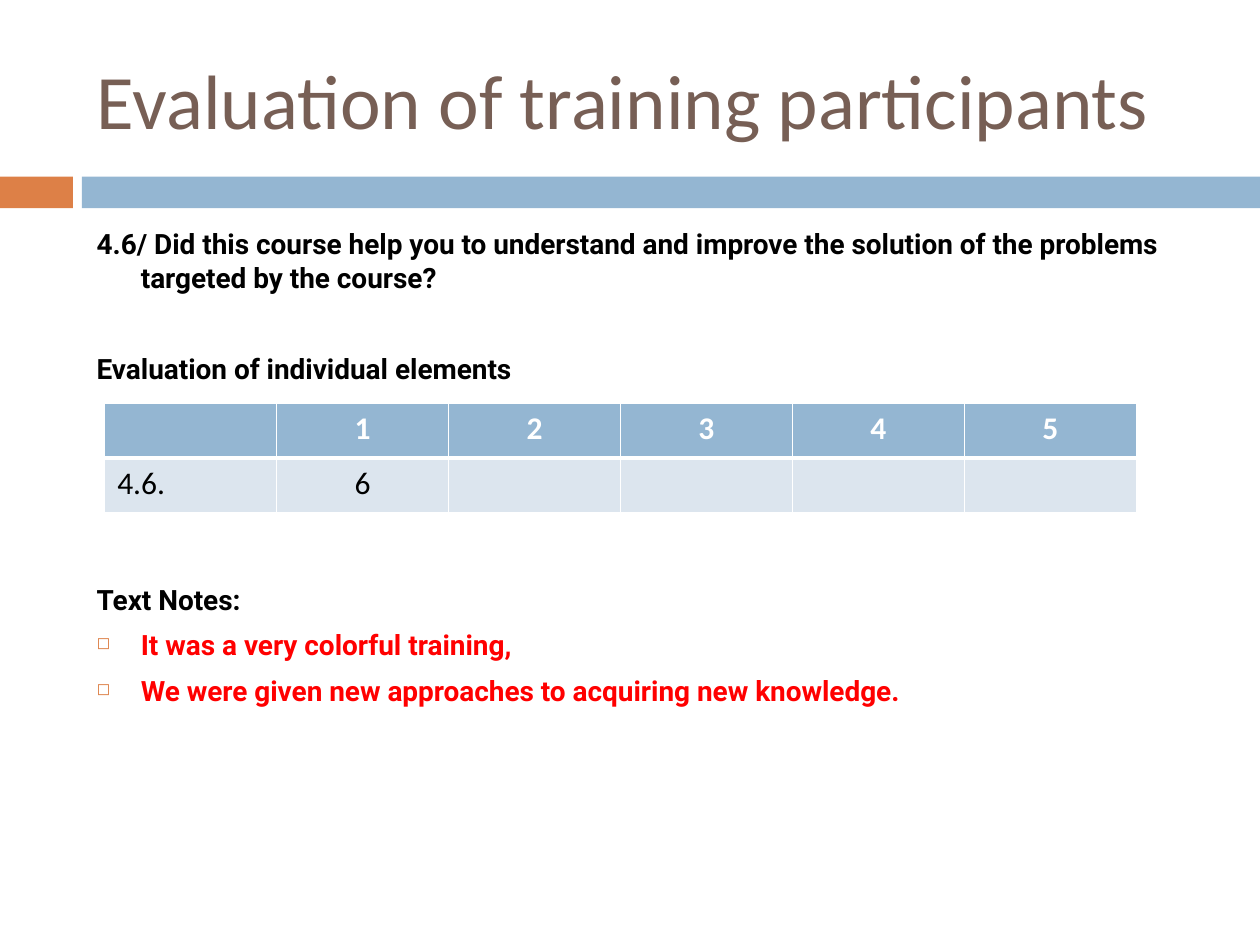
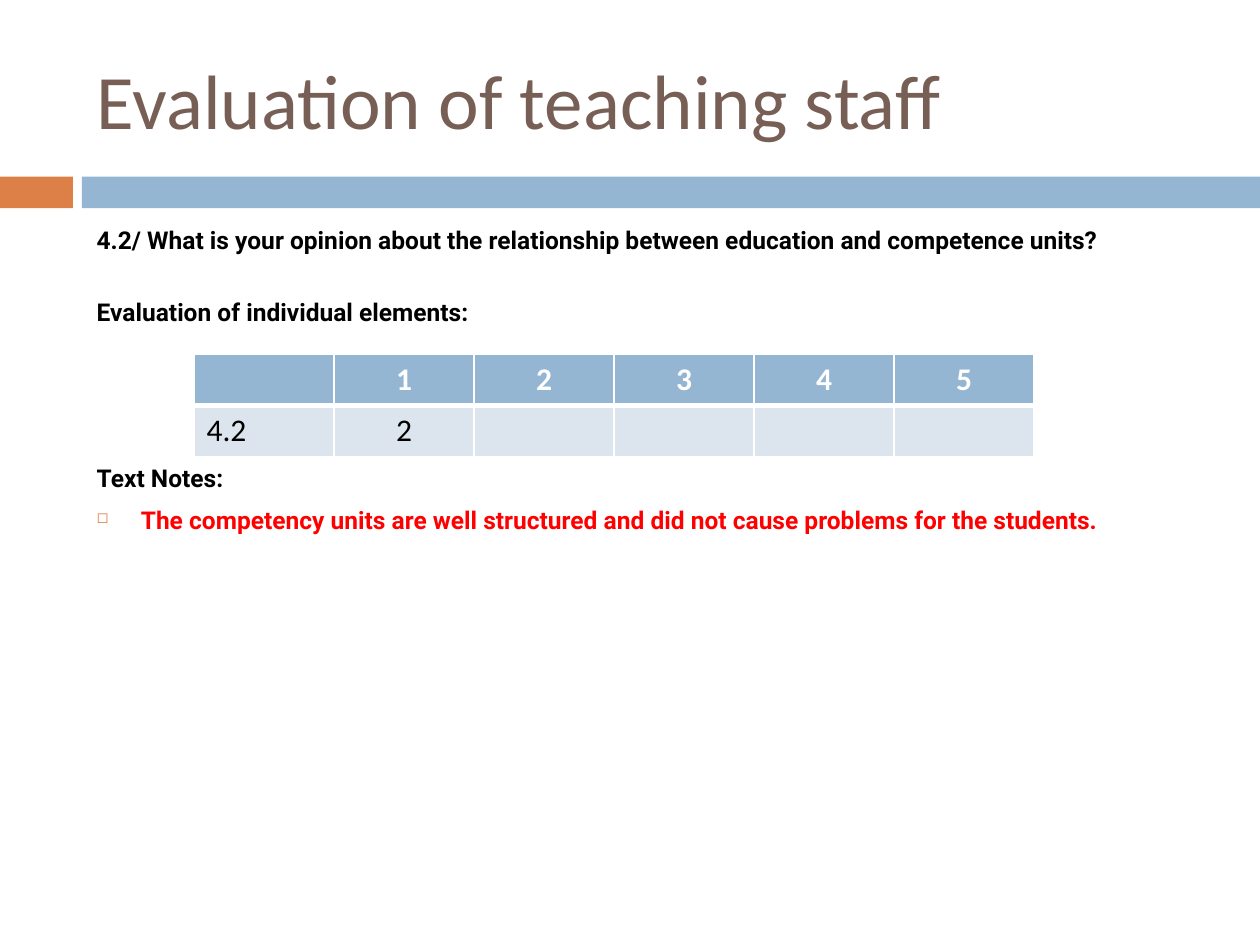
from dataclasses import dataclass

from lxml.etree import SubElement
from pptx import Presentation
from pptx.dml.color import RGBColor
from pptx.enum.shapes import MSO_SHAPE
from pptx.enum.text import MSO_ANCHOR, PP_ALIGN
from pptx.oxml.ns import qn
from pptx.util import Cm, Pt

# Content: lengths in cm, gaps before paragraphs in points
RATINGS = ["", "1", "2", "3", "4", "5"]
SLIDES = [
    dict(
        title="Evaluation of training participants",
        question="4.6/ Did this course help you to understand and improve "
                 "the solution of the problems targeted by the course?",
        heading="Evaluation of individual elements",
        notes=["It was a very colorful training,",
               "We were given new approaches to acquiring new knowledge."],
        scores=["4.6.", "6", "", "", "", ""],
        body_box=(1.7, 4.45, 22.99, 13.87), body_size=16, question_spacing=1.0,
        heading_gap=33, notes_gap=112.4,
        table_at=(2.11, 8.13), table_width=20.8, row_height=1.1,
    ),
    dict(
        title="Evaluation of teaching staff",
        question="4.2/ What is your opinion about the relationship between "
                 "education and competence units?",
        heading="Evaluation of individual elements:",
        notes=["The competency units are well structured and did not cause "
               "problems for the students."],
        scores=["4.2", "2", "", "", "", ""],
        body_box=(1.7, 4.52, 23.19, 13.87), body_size=14, question_spacing=0.8,
        heading_gap=27.8, notes_gap=78.2,
        table_at=(3.91, 7.14), table_width=16.94, row_height=1.03,
    ),
]


@dataclass(frozen=True)
class Theme:
    title: str = "775F55"
    accent: str = "DD8047"
    band: str = "94B6D2"
    score_row: str = "DCE5EE"
    text: str = "000000"
    note: str = "FF0000"
    white: str = "FFFFFF"
    title_font: str = "Calibri"
    body_font: str = "Roboto"
    title_size: int = 44
    table_size: int = 18
    paragraph_gap: int = 7
    bullet_percent: int = 60
    thin: int = 1
    thick: int = 3


THEME = Theme()
TITLE_BOX = (1.7, 0.63, 22.66, 2.74)
BANDS = [((0, 3.56, 1.47, 0.64), THEME.accent),
         ((1.65, 3.56, 23.75, 0.64), THEME.band)]
HANGING = Cm(0.89)


def add_color(parent, color):
    SubElement(parent, qn("a:srgbClr"), val=color)


def write(frame, text, *, size, font, color=THEME.text, bold=False,
          align=PP_ALIGN.LEFT, gap=0, spacing=1.0, hanging=False, bullet=False):
    """Fill the first paragraph of the frame, or add one after it."""
    paragraph = frame.paragraphs[0]
    if paragraph.runs:
        paragraph = frame.add_paragraph()
    paragraph.alignment = align
    paragraph.space_before = Pt(gap)
    paragraph.line_spacing = spacing
    run = paragraph.add_run()
    run.text = text
    run.font.size, run.font.name, run.font.bold = Pt(size), font, bold
    run.font.color.rgb = RGBColor.from_string(color)
    properties = paragraph._p.get_or_add_pPr()
    if hanging:
        properties.set("marL", str(HANGING))
        properties.set("indent", str(-HANGING))
    if bullet:
        add_color(SubElement(properties, qn("a:buClr")), THEME.accent)
        SubElement(properties, qn("a:buSzPct"), val=str(THEME.bullet_percent * 1000))
        SubElement(properties, qn("a:buChar"), char="◻")


def add_frame(slide, box, anchor=MSO_ANCHOR.TOP):
    frame = slide.shapes.add_textbox(*map(Cm, box)).text_frame
    frame.word_wrap = True
    frame.vertical_anchor = anchor
    return frame


def add_header(slide, title):
    for box, color in BANDS:
        band = slide.shapes.add_shape(MSO_SHAPE.RECTANGLE, *map(Cm, box))
        band.shadow.inherit = False
        band.fill.solid()
        band.fill.fore_color.rgb = RGBColor.from_string(color)
        band.line.fill.background()
    write(add_frame(slide, TITLE_BOX, MSO_ANCHOR.MIDDLE), title,
          size=THEME.title_size, font=THEME.title_font, color=THEME.title)


def add_body(slide, content):
    body = add_frame(slide, content["body_box"])
    style = dict(size=content["body_size"], font=THEME.body_font, bold=True, hanging=True)
    spacing = content["question_spacing"]
    write(body, content["question"], gap=THEME.paragraph_gap, spacing=spacing, **style)
    write(body, content["heading"], gap=content["heading_gap"], spacing=spacing, **style)
    write(body, "Text Notes:", gap=content["notes_gap"], **style)
    for note in content["notes"]:
        write(body, note, color=THEME.note, gap=THEME.paragraph_gap, bullet=True, **style)


def style_cell(cell, fill, is_header):
    # Borders go before the fill in the cell properties
    widths = dict(lnL=THEME.thin, lnR=THEME.thin,
                  lnT=THEME.thin if is_header else THEME.thick,
                  lnB=THEME.thick if is_header else THEME.thin)
    properties = cell._tc.get_or_add_tcPr()
    for side, width in widths.items():
        border = SubElement(properties, qn(f"a:{side}"), w=str(Pt(width)))
        add_color(SubElement(border, qn("a:solidFill")), THEME.white)
    cell.fill.solid()
    cell.fill.fore_color.rgb = RGBColor.from_string(fill)


def add_scores(slide, content):
    rows = [RATINGS, content["scores"]]
    left, top = map(Cm, content["table_at"])
    scores = slide.shapes.add_table(
        len(rows), len(RATINGS), left, top, Cm(content["table_width"]),
        Cm(content["row_height"] * len(rows))).table
    for row, values in enumerate(rows):
        is_header = row == 0
        for column, value in enumerate(values):
            cell = scores.cell(row, column)
            style_cell(cell, THEME.band if is_header else THEME.score_row, is_header)
            if value:
                write(cell.text_frame, value, size=THEME.table_size,
                      font=THEME.title_font, bold=is_header,
                      color=THEME.white if is_header else THEME.text,
                      align=PP_ALIGN.CENTER if column else PP_ALIGN.LEFT)


def main():
    deck = Presentation()
    deck.slide_width, deck.slide_height = Cm(25.4), Cm(19.05)
    blank = deck.slide_layouts[6]
    for content in SLIDES:
        slide = deck.slides.add_slide(blank)
        add_header(slide, content["title"])
        add_body(slide, content)
        add_scores(slide, content)
    deck.save("out.pptx")


if __name__ == "__main__":
    main()
